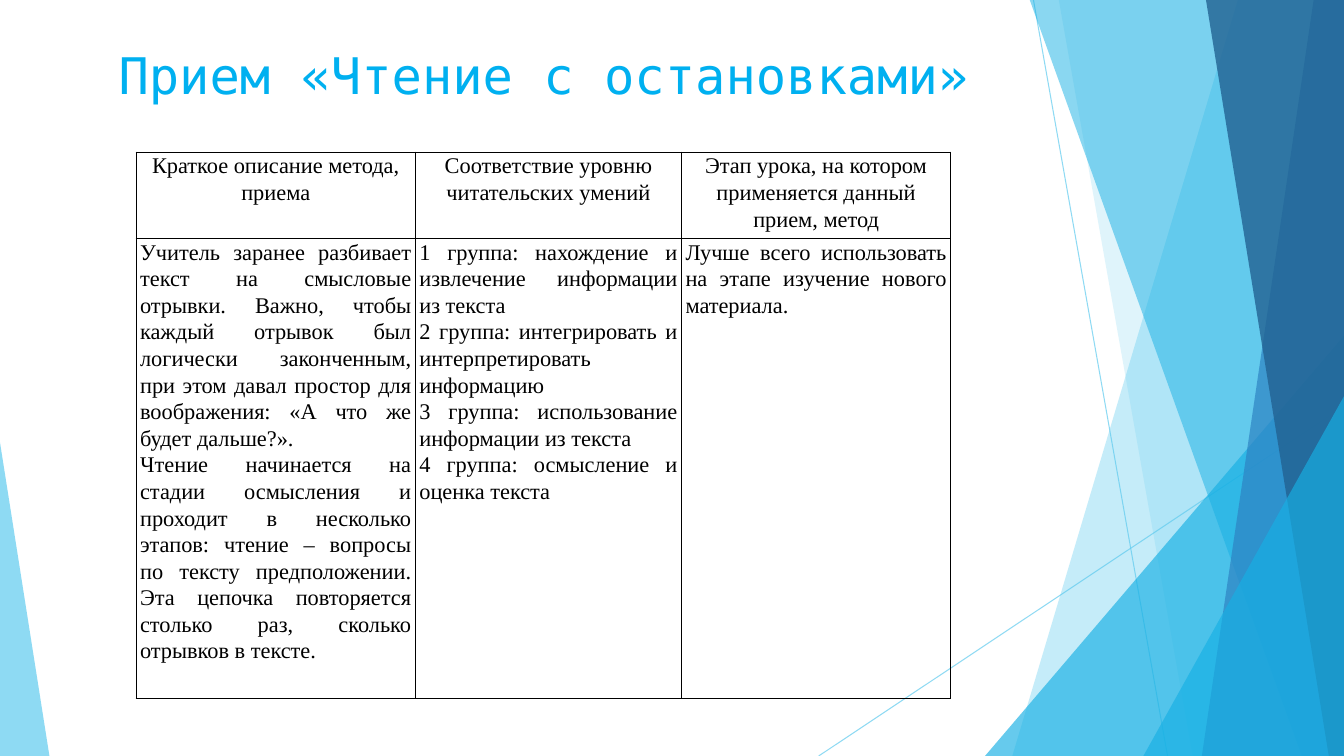
from lxml.etree import SubElement
from pptx import Presentation
from pptx.dml.color import RGBColor as Rgb
from pptx.enum.shapes import MSO_CONNECTOR as Conn, MSO_SHAPE as Kind
from pptx.enum.text import MSO_ANCHOR as Anchor, PP_ALIGN as Align
from pptx.oxml import parse_xml
from pptx.oxml.ns import nsdecls, qn
from pptx.util import Pt

PX = 9144
hue = Rgb.from_string


def fade(shape, share):
    for tone in shape._element.iter(qn("a:srgbClr")):
        SubElement(tone, qn("a:alpha"), val=str(share * 1000))


def write(para, text, font, size, color, align):
    para.alignment = align
    run = para.add_run()
    run.text = text
    run.font.name = font
    run.font.size = Pt(size)
    run.font.color.rgb = hue(color)


deck = Presentation()
deck.slide_width, deck.slide_height = 1333 * PX, 750 * PX
slide = deck.slides.add_slide(deck.slide_layouts[6])
shapes = slide.shapes

for ends in [(1025, 0, 1158, 750), (1333, 403, 812, 750)]:
    line = shapes.add_connector(Conn.STRAIGHT, *[n * PX for n in ends])
    line.line.color.rgb = hue("5FCBEF")
    line.line.width = Pt(0.75)
    fade(line, 70)
    SubElement(line._element.spPr, qn("a:effectLst"))

facets = [
    ("band", (1228, 1004), "5FCBEF", 36),
    ("band", (1050, 1183), "5FCBEF", 20),
    ("right", (977, 333, 356, 417), "17B0E4", 66),
    ("band", (1021, 1291), "17B0E4", 50),
    ("band", (1303, 1192), "2E83C3", 70),
    ("band", (1196, 1318), "226292", 80),
    ("right", (1134, 393, 199, 357), "17B0E4", 66),
    ("left", (0, 439, 49, 311), "5FCBEF", 70),
]
for kind, place, color, share in facets:
    if kind == "band":
        top, base = place
        path = shapes.build_freeform(top, -1, scale=PX)
        path.add_line_segments([(1333, -1), (1333, 750), (base, 750)], close=True)
        facet = path.convert_to_shape()
    else:
        facet = shapes.add_shape(Kind.ISOSCELES_TRIANGLE, *[n * PX for n in place])
        facet.adjustments[0] = 1 if kind == "right" else 0
    facet.shadow.inherit = False
    facet.fill.solid()
    facet.fill.fore_color.rgb = hue(color)
    facet.line.fill.background()
    fade(facet, share)

title = shapes.add_textbox(69 * PX, 39 * PX, 940 * PX, 144 * PX).text_frame
title.word_wrap = True
title.vertical_anchor = Anchor.TOP
write(title.paragraphs[0], "Прием «Чтение с остановками»",
      "DejaVu Sans Mono", 36, "00B0F0", Align.CENTER)

rows = [
    [
        ["Краткое описание метода, приема"],
        ["Соответствие уровню читательских умений"],
        ["Этап урока, на котором применяется данный прием, метод"],
    ],
    [
        [
            "Учитель заранее разбивает текст на смысловые отрывки. Важно, чтобы "
            "каждый отрывок был логически законченным, при этом давал простор для "
            "воображения: «А что же будет дальше?».",
            "Чтение начинается на стадии осмысления и проходит в несколько этапов: "
            "чтение – вопросы по тексту предположении. Эта цепочка повторяется "
            "столько раз, сколько отрывков в тексте.",
        ],
        [
            "1 группа: нахождение и извлечение информации из текста",
            "2 группа: интегрировать и интерпретировать информацию",
            "3 группа: использование информации из текста",
            "4 группа: осмысление и оценка текста",
        ],
        ["Лучше всего использовать на этапе изучение нового материала."],
    ],
]
grid = shapes.add_table(2, 3, 135 * PX, 151 * PX, 808 * PX, 501 * PX).table
grid.first_row = grid.horz_banding = False
for col, wide in zip(grid.columns, (277, 264, 267)):
    col.width = wide * PX
for row, high in zip(grid.rows, (79, 422)):
    row.height = high * PX

for r, row in enumerate(rows):
    for c, texts in enumerate(row):
        cell = grid.cell(r, c)
        cell.margin_left = cell.margin_right = 4 * PX
        cell.margin_top = cell.margin_bottom = 0
        cell.fill.background()
        props = cell._tc.get_or_add_tcPr()
        for i, side in enumerate("LRTB"):
            props.insert(i, parse_xml(
                f'<a:ln{side} {nsdecls("a")} w="12700"><a:solidFill>'
                f'<a:srgbClr val="000000"/></a:solidFill></a:ln{side}>'))
        frame = cell.text_frame
        for i, text in enumerate(texts):
            para = frame.add_paragraph() if i else frame.paragraphs[0]
            para.line_spacing = 1.07
            write(para, text, "Times New Roman", 16, "000000",
                  Align.JUSTIFY if r else Align.CENTER)

deck.save("out.pptx")
